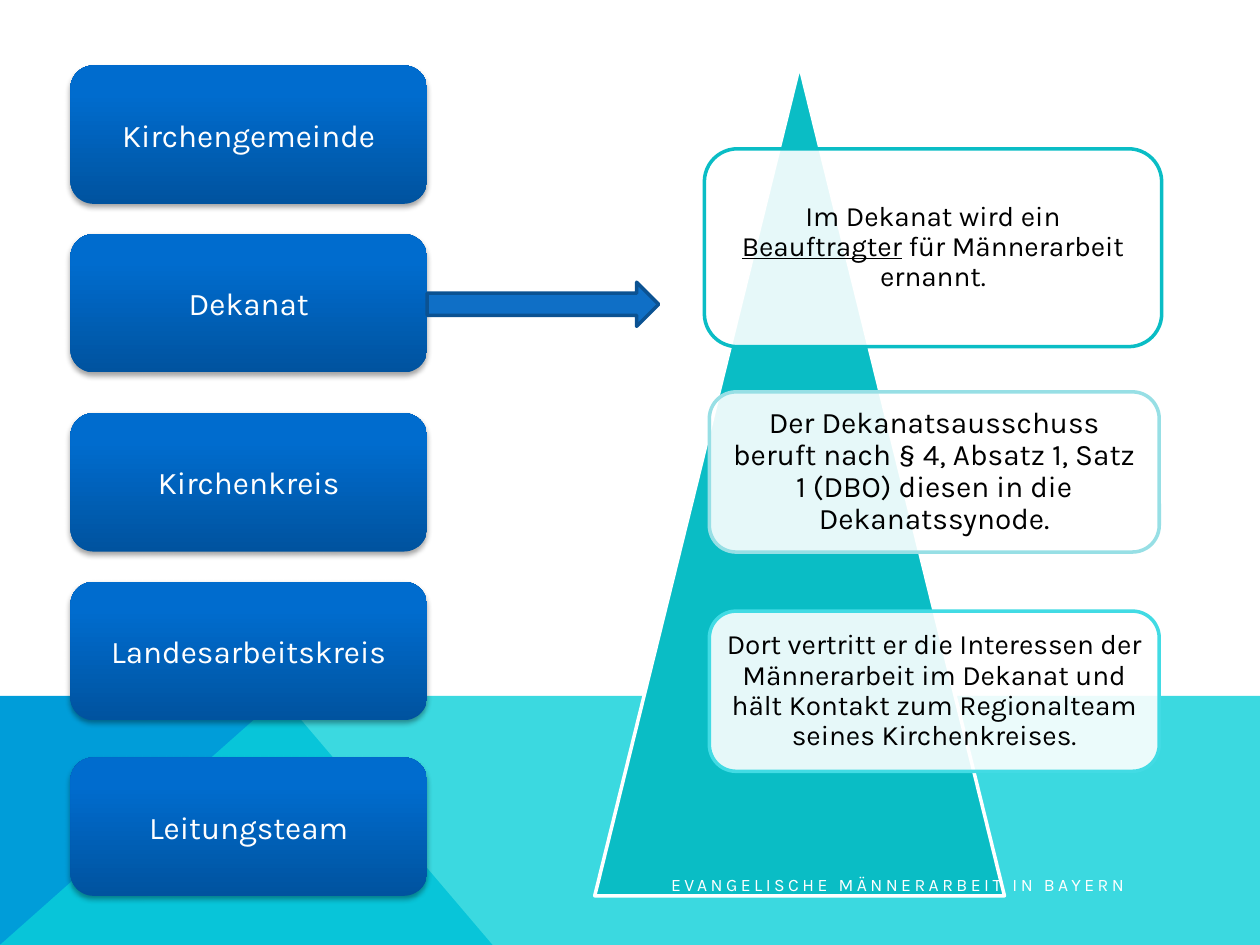
from lxml.etree import SubElement
from pptx import Presentation
from pptx.dml.color import RGBColor
from pptx.enum.shapes import MSO_SHAPE
from pptx.enum.text import MSO_ANCHOR, PP_ALIGN
from pptx.oxml.ns import qn
from pptx.util import Cm, Pt

WIDTH, HEIGHT = 25.4, 19.05
LEVELS = [
    ("Kirchengemeinde", 0),
    ("Dekanat", 3.4),
    ("Kirchenkreis", 7.01),
    ("Landesarbeitskreis", 10.41),
    ("Leitungsteam", 13.95),
]
# Text, offset and size within the pyramid region, border colour, text size
CARDS = [
    ("Im Dekanat wird ein Beauftragter für Männerarbeit ernannt.",
     (2.21, 1.68, 9.22, 3.99), "0ABDC5", 16),
    ("Der Dekanatsausschuss beruft nach § 4, Absatz 1, Satz 1 (DBO) "
     "diesen in die Dekanatssynode.",
     (2.31, 6.58, 9.07, 3.23), "97DFE5", 17),
    ("Dort vertritt er die Interessen der Männerarbeit im Dekanat und "
     "hält Kontakt zum Regionalteam seines Kirchenkreises.",
     (2.31, 11, 9.07, 3.23), "42DBE4", 16),
]


def color(value):
    return RGBColor.from_string(value)


def fill_solid(shape, value, opacity=100):
    shape.fill.solid()
    shape.fill.fore_color.rgb = color(value)
    if opacity < 100:
        tint = shape.fill._xPr.find(".//" + qn("a:srgbClr"))
        SubElement(tint, qn("a:alpha"), val=str(opacity * 1000))


def outline(shape, value=None):
    if value is None:
        shape.line.fill.background()
    else:
        shape.line.color.rgb = color(value)
        shape.line.width = Pt(2)


def add_box(page, kind, box):
    shape = page.shapes.add_shape(kind, *map(Cm, box))
    shape.shadow.inherit = False
    return shape


def add_shadow(shape):
    effects = shape._element.spPr.find(qn("a:effectLst"))
    shadow = SubElement(effects, qn("a:outerShdw"), blurRad=str(Pt(3.1)),
                        dist=str(Pt(1.8)), dir="5400000", rotWithShape="0")
    tint = SubElement(shadow, qn("a:srgbClr"), val="000000")
    SubElement(tint, qn("a:alpha"), val="35000")


def write(shape, text, size=18, ink="FFFFFF", align=PP_ALIGN.CENTER,
          underlined="", line_spacing=None, inset=None, tracking=None):
    """Fill the shape with one paragraph, underlining one word if asked."""
    frame = shape.text_frame
    frame.word_wrap = True
    frame.vertical_anchor = MSO_ANCHOR.MIDDLE
    if inset is not None:
        frame.margin_left = frame.margin_right = Cm(inset)
        frame.margin_top = frame.margin_bottom = Cm(inset)
    para = frame.paragraphs[0]
    para.alignment = align
    para.line_spacing = line_spacing
    parts = text.partition(underlined) if underlined else (text,)
    for part in filter(None, parts):
        span = para.add_run()
        span.text = part
        span.font.name = "Karla"
        span.font.size = Pt(size)
        span.font.color.rgb = color(ink)
        if part == underlined:
            span.font.underline = True
        if tracking:
            span._r.get_or_add_rPr().set("spc", str(tracking * 100))


def add_polygon(page, points, value, opacity=100):
    corners = [(Cm(x), Cm(y)) for x, y in points]
    builder = page.shapes.build_freeform(*corners[0])
    builder.add_line_segments(corners[1:], close=True)
    shape = builder.convert_to_shape()
    shape.shadow.inherit = False
    fill_solid(shape, value, opacity)
    outline(shape)


def add_backdrop(page, left, top, width, height):
    right, bottom = left + width, top + height
    peak = (left + 5.66, top)
    add_polygon(page, [(left, bottom), (left, top), peak,
                       (left + 9.93, bottom)], "009DD9")
    add_polygon(page, [(left, bottom), peak, (right, top),
                       (right, bottom)], "0BD0D9", 80)


def add_levels(page, left, top, width, height):
    for name, offset in LEVELS:
        button = add_box(page, MSO_SHAPE.ROUNDED_RECTANGLE,
                         (left, top + offset, width, height))
        button.fill.gradient()
        button.fill.gradient_angle = 90
        stops = zip(button.fill.gradient_stops, ("00539F", "006CCE"), (0, 0.8))
        for stop, value, position in stops:
            stop.color.rgb = color(value)
            stop.position = position
        outline(button)
        add_shadow(button)
        write(button, name)


def add_pyramid(page, left, top, width, height):
    triangle = add_box(page, MSO_SHAPE.ISOSCELES_TRIANGLE,
                       (left, top, width, height))
    fill_solid(triangle, "0ABDC5")
    outline(triangle, "FFFFFF")
    for text, (x, y, card_width, card_height), border, size in CARDS:
        card = add_box(page, MSO_SHAPE.ROUNDED_RECTANGLE,
                       (left + x, top + y, card_width, card_height))
        fill_solid(card, "FFFFFF", 90)
        outline(card, border)
        write(card, text, size=size, ink="000000", underlined="Beauftragter",
              line_spacing=0.9, inset=0.18)


def add_arrow(page, *box):
    arrow = add_box(page, MSO_SHAPE.RIGHT_ARROW, box)
    fill_solid(arrow, "0F6FC6")
    outline(arrow, "0B5292")


def add_footer(page, *box):
    footer = page.shapes.add_textbox(*map(Cm, box))
    write(footer, "EVANGELISCHE MÄNNERARBEIT IN BAYERN", size=10,
          align=PP_ALIGN.RIGHT, tracking=2)


def main():
    deck = Presentation()
    deck.slide_width, deck.slide_height = Cm(WIDTH), Cm(HEIGHT)
    page = deck.slides.add_slide(deck.slide_layouts[6])
    add_backdrop(page, 0, 14.03, WIDTH, HEIGHT - 14.03)
    add_levels(page, 1.42, 1.32, 7.19, 2.79)
    add_pyramid(page, 11.99, 1.32, 8.26, 16.74)
    add_arrow(page, 8.61, 5.69, 4.67, 0.89)
    add_footer(page, 9.78, 17.45, 13.13, 0.76)
    deck.save("out.pptx")


if __name__ == "__main__":
    main()
